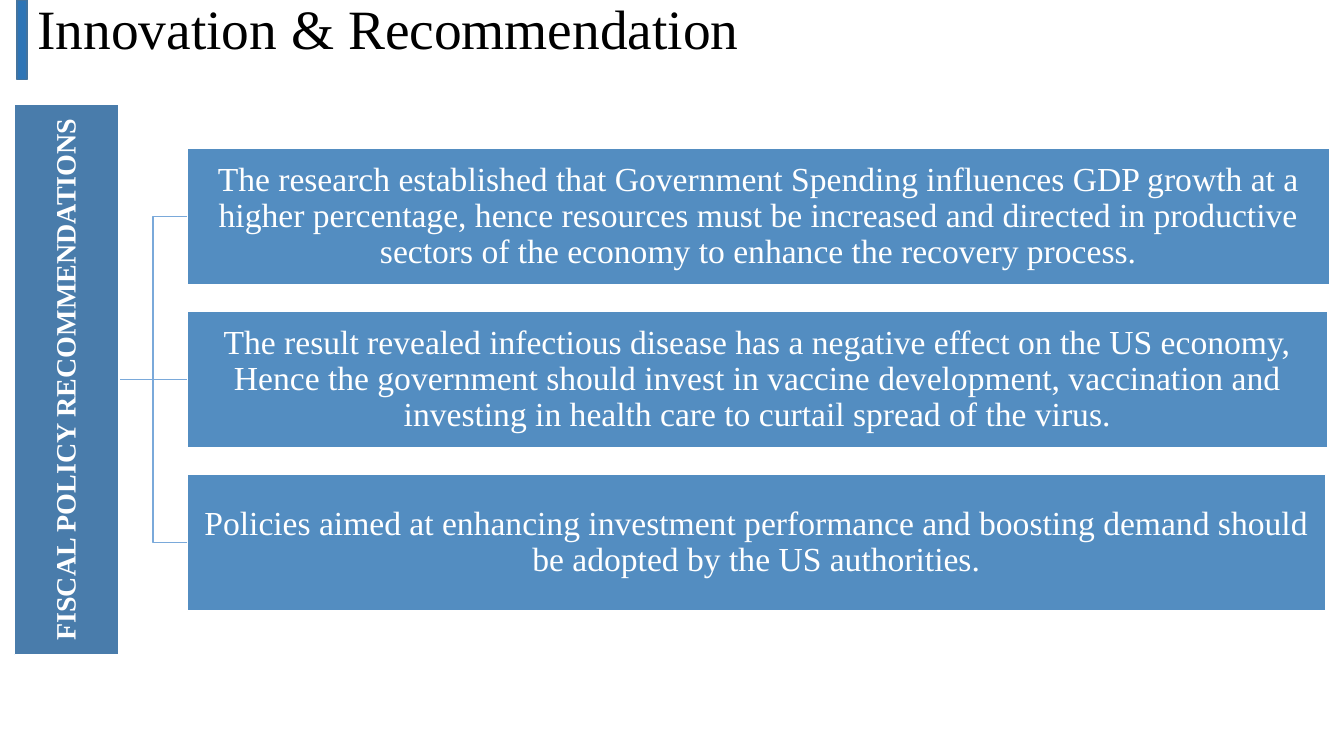
from lxml.etree import SubElement
from pptx import Presentation
from pptx.dml.color import RGBColor
from pptx.enum.shapes import MSO_CONNECTOR, MSO_SHAPE
from pptx.enum.text import MSO_ANCHOR, PP_ALIGN
from pptx.oxml.ns import qn
from pptx.util import Cm, Pt


def paint(target, color):
    if hasattr(target, "solid"):
        target.solid()
        target.fore_color.rgb = RGBColor.from_string(color)
    else:
        target.color.rgb = RGBColor.from_string(color)


def write(box, text, size, color, align, bold=False, inset=0.05):
    frame = box.text_frame
    settings = {"word_wrap": True, "vertical_anchor": MSO_ANCHOR.MIDDLE}
    for side in ("left", "right", "top", "bottom"):
        settings[f"margin_{side}"] = Cm(inset)
    for name, value in settings.items():
        setattr(frame, name, value)
    para = frame.paragraphs[0]
    para.alignment = align
    para.line_spacing = 0.9
    span = para.add_run()
    span.text = text
    for name, value in {"name": "Times New Roman", "size": Pt(size), "bold": bold}.items():
        setattr(span.font, name, value)
    paint(span.font, color)


deck = Presentation()
deck.slide_width, deck.slide_height = Cm(33.87), Cm(19.05)
page = deck.slides.add_slide(deck.slide_layouts[6])

title = page.shapes.add_textbox(Cm(0.69), Cm(0.05), Cm(29.21), Cm(1.5))
write(title, "Innovation & Recommendation", 39.6, "000000", PP_ALIGN.LEFT, inset=0.25)

first_top, row_step, row_height = 3.73, 4.11, 3.45
row_left, first_width, width_step = 4.72, 28.78, 0.05
middle = first_top + row_step + row_height / 2

recommendations = [
    "The research established that Government Spending influences GDP growth at a higher percentage, "
    "hence resources must be increased and directed in productive sectors of the economy to enhance "
    "the recovery process.",
    "The result revealed infectious disease has a negative effect on the US economy, Hence the "
    "government should invest in vaccine development, vaccination and investing in health care to "
    "curtail spread of the virus.",
    "Policies aimed at enhancing investment performance and boosting demand should be adopted by "
    "the US authorities.",
]

for index in range(len(recommendations)):
    row_middle = first_top + index * row_step + row_height / 2
    branch = page.shapes.add_connector(
        MSO_CONNECTOR.ELBOW, Cm(3), Cm(middle), Cm(row_left), Cm(row_middle)
    )
    paint(branch.line, "7AA9DA")
    branch.line.width = Pt(1)
    SubElement(branch.element.spPr, qn("a:effectLst"))

label_length, label_depth = 13.87, 2.64
label_place = (1.68 - label_length / 2, middle - label_depth / 2, label_length, label_depth)
blocks = [(label_place, 270, "497CAB", "FFFFFF", "FISCAL POLICY RECOMMENDATIONS", 20, True)]
for index, text in enumerate(recommendations):
    place = (row_left, first_top + index * row_step, first_width - index * width_step, row_height)
    blocks.append((place, 0, "538DC1", "FFFFFF", text, 24, False))
blocks.append(((0.43, 0, 0.25, 2.01), 0, "2E75B6", "43739E", "", 0, False))

for place, angle, fill, outline, text, size, bold in blocks:
    box = page.shapes.add_shape(MSO_SHAPE.RECTANGLE, *(Cm(value) for value in place))
    box.rotation = angle
    box.shadow.inherit = False
    paint(box.fill, fill)
    paint(box.line, outline)
    box.line.width = Pt(1)
    if text:
        write(box, text, size, "FFFFFF", PP_ALIGN.CENTER, bold)

deck.save("out.pptx")
